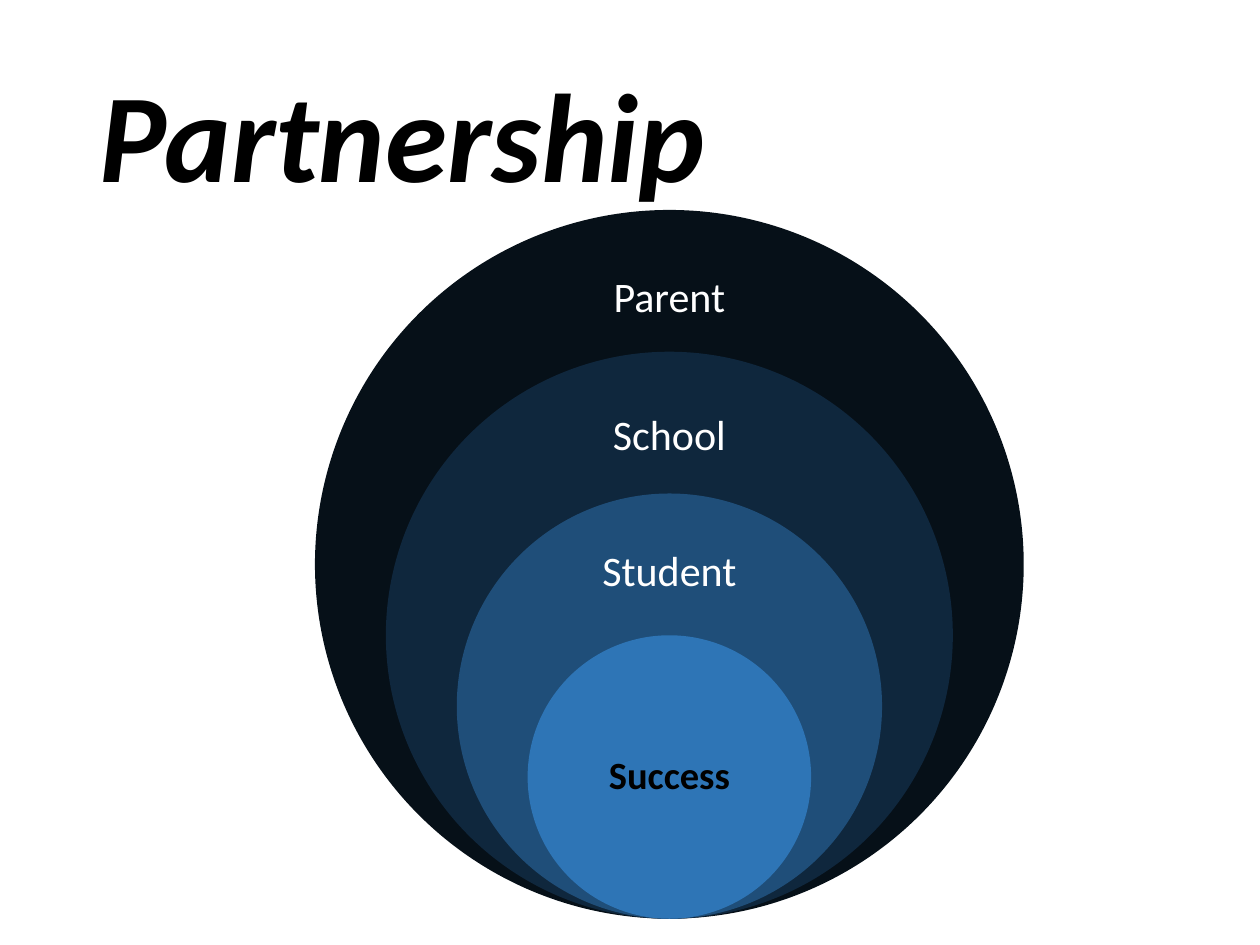
from dataclasses import dataclass

from pptx import Presentation
from pptx.dml.color import RGBColor as Rgb
from pptx.enum.shapes import MSO_SHAPE as Preset
from pptx.enum.text import MSO_ANCHOR as Anchor, PP_ALIGN as Align
from pptx.util import Pt


@dataclass(frozen=True)
class Theme:
    font: str = "Calibri"
    black: str = "000000"
    white: str = "FFFFFF"
    rings: tuple = ("061018", "0F273D", "1F4E79", "2E75B6")
    title_size: int = 72
    ring_size: int = 24
    core_size: int = 22


theme = Theme()


def write(box, text, size, color, align, bold=False, italic=False):
    frame = box.text_frame
    frame.word_wrap = True
    frame.vertical_anchor = Anchor.MIDDLE
    para = frame.paragraphs[0]
    para.alignment = align
    para.line_spacing = 0.9
    span = para.add_run()
    span.text = text
    span.font.name = theme.font
    span.font.size = Pt(size)
    span.font.bold = bold
    span.font.italic = italic
    span.font.color.rgb = Rgb.from_string(color)


deck = Presentation()
deck.slide_width, deck.slide_height = Pt(720), Pt(540)
page = deck.slides.add_slide(deck.slide_layouts[5])

title = page.shapes.title
title.left, title.top, title.width, title.height = Pt(49.5), Pt(28.75), Pt(621), Pt(104.4)
write(title, "Partnership", theme.title_size, theme.black, Align.LEFT, bold=True, italic=True)

center_x, bottom, step = 382.5, 525, 81
label_width = 113.4
rings = [
    ("Parent", 20.4, 60.5, 13.6, theme.ring_size, theme.white, False),
    ("School", 19.4, 58.3, 13.6, theme.ring_size, theme.white, False),
    ("Student", 18.2, 54.7, 13.6, theme.ring_size, theme.white, False),
    ("Success", 40.5, 81, 12.3, theme.core_size, theme.black, True),
]

diagram = page.shapes.add_group_shape()
for index, (ring, fill) in enumerate(zip(rings, theme.rings)):
    text, offset, height, inset, size, color, bold = ring
    diameter = step * (5 - index)
    top = bottom - diameter

    circle = diagram.shapes.add_shape(
        Preset.OVAL, Pt(center_x - diameter / 2), Pt(top), Pt(diameter), Pt(diameter)
    )
    circle.shadow.inherit = False
    circle.fill.solid()
    circle.fill.fore_color.rgb = Rgb.from_string(fill)
    circle.line.fill.background()

    label = diagram.shapes.add_textbox(
        Pt(center_x - label_width / 2), Pt(top + offset), Pt(label_width), Pt(height)
    )
    frame = label.text_frame
    frame.margin_left = frame.margin_right = Pt(inset)
    frame.margin_top = frame.margin_bottom = Pt(inset)
    write(label, text, size, color, Align.CENTER, bold)

deck.save("out.pptx")
